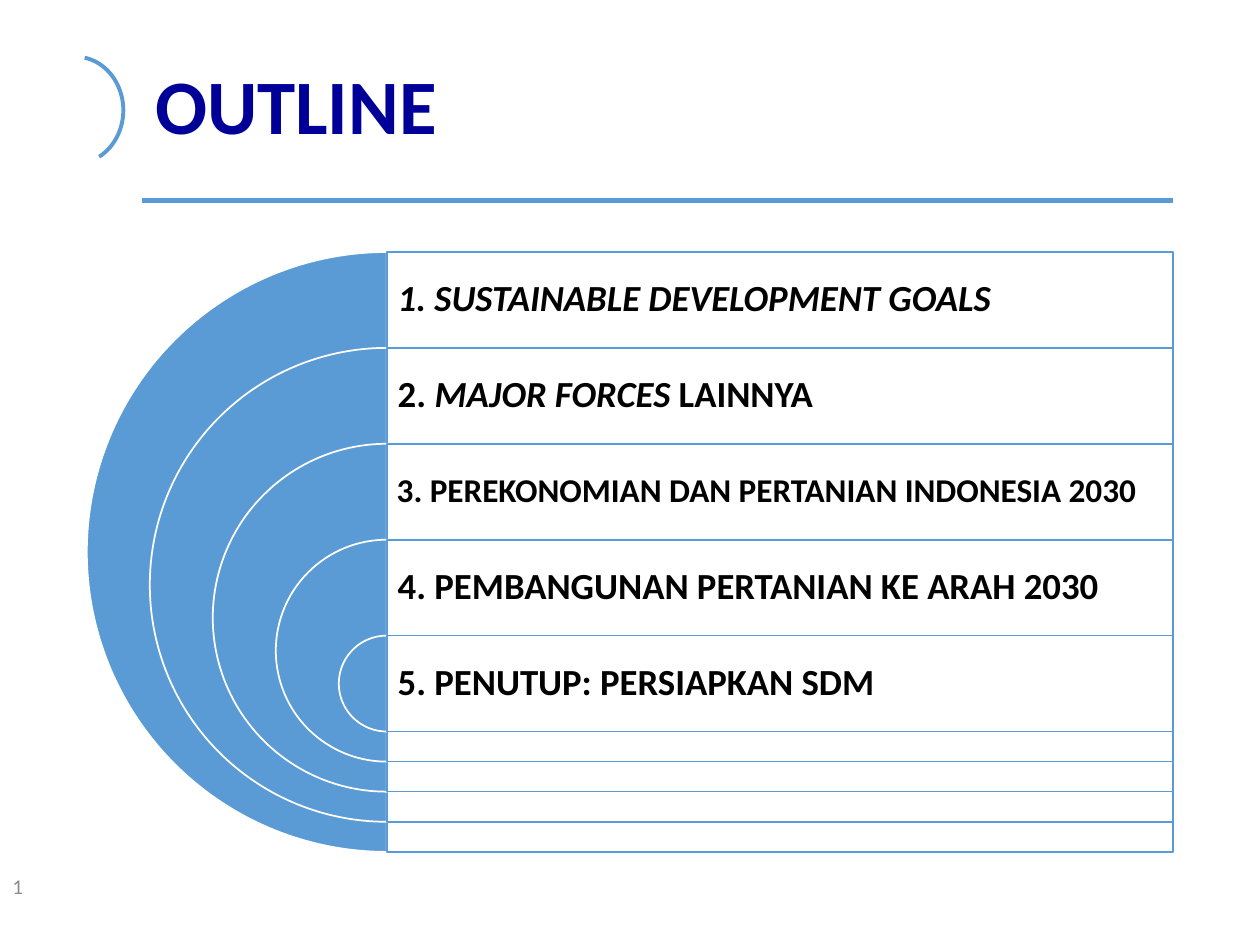
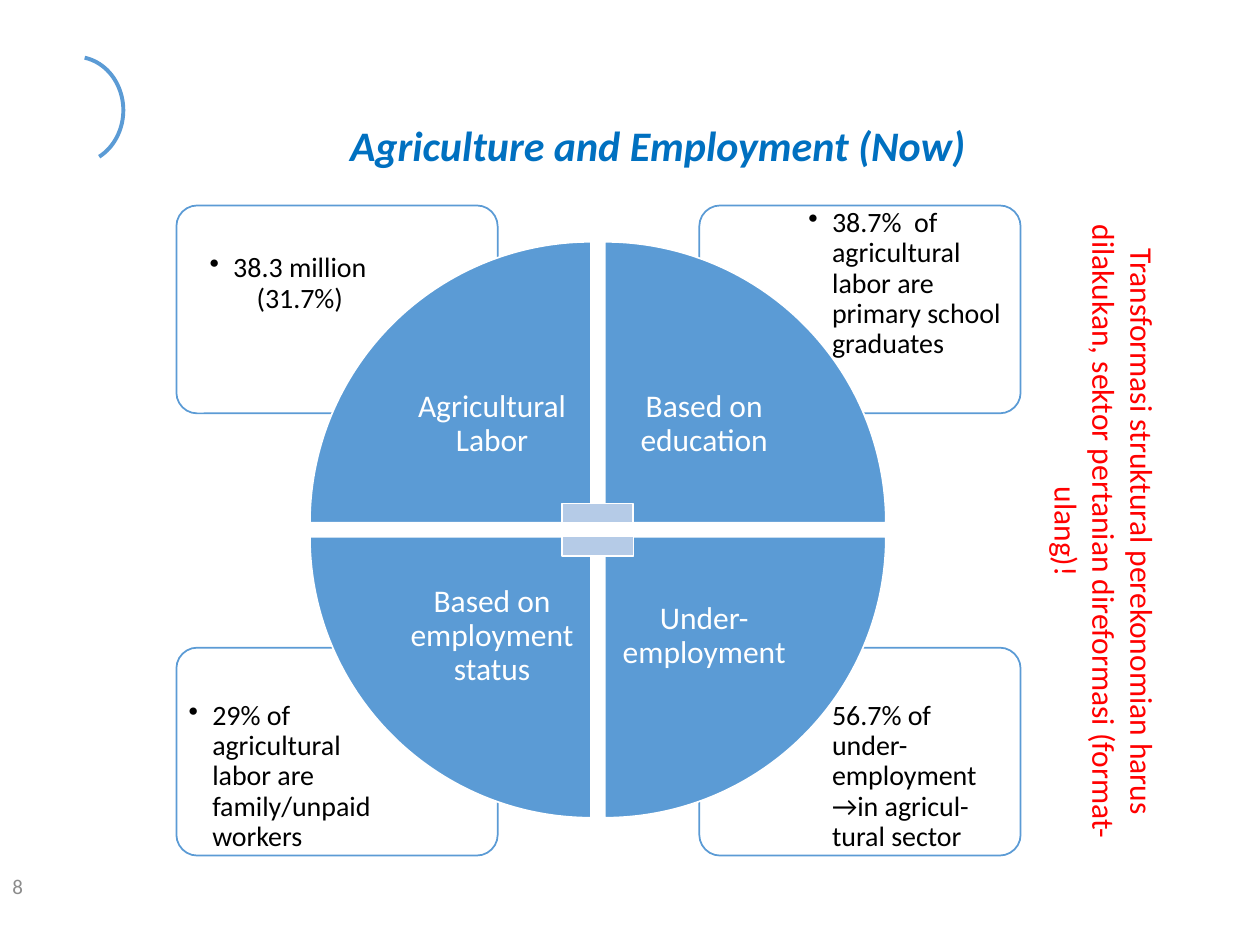
from lxml.etree import SubElement
from pptx import Presentation
from pptx.dml.color import RGBColor
from pptx.enum.shapes import MSO_CONNECTOR, MSO_SHAPE
from pptx.enum.text import MSO_ANCHOR, MSO_AUTO_SIZE, PP_ALIGN
from pptx.oxml.ns import qn
from pptx.util import Pt

FONT = "Calibri"
HUES = {
    "blue": "5B9BD5", "pale": "B5CBE7", "navy": "000099", "azure": "0070C0",
    "white": "FFFFFF", "black": "000000", "red": "FF0000", "gray": "8C8C8C",
}
INK = {name: RGBColor.from_string(code) for name, code in HUES.items()}


def draw(slide, kind, box, fill, line, width=1, alpha=None):
    """Add a preset shape; fill None leaves it open, alpha is opacity in percent."""
    shape = slide.shapes.add_shape(kind, *map(Pt, box))
    shape.shadow.inherit = False
    shape.line.color.rgb = INK[line]
    shape.line.width = Pt(width)
    if fill is None:
        shape.fill.background()
    else:
        shape.fill.solid()
        shape.fill.fore_color.rgb = INK[fill]
    if alpha:
        color = shape.element.spPr.find(qn("a:solidFill"))[0]
        SubElement(color, qn("a:alpha")).set("val", str(alpha * 1000))
    return shape


def write(shape, runs, size, color, align=PP_ALIGN.LEFT, pad=None, space=0.9,
          bold=False):
    """Fill a shape with one paragraph of (text, italic) runs."""
    frame = shape.text_frame
    frame.word_wrap = True
    frame.auto_size = MSO_AUTO_SIZE.NONE
    frame.vertical_anchor = MSO_ANCHOR.MIDDLE
    if pad is not None:
        frame.margin_left = frame.margin_right = Pt(pad)
        frame.margin_top = frame.margin_bottom = Pt(pad)
    para = frame.paragraphs[0]
    para.alignment = align
    para.line_spacing = space
    for text, italic in runs:
        run = para.add_run()
        run.text = text
        run.font.name = FONT
        run.font.size = Pt(size)
        run.font.bold = bold
        run.font.italic = italic
        run.font.color.rgb = INK[color]
    return para


deck = Presentation()
deck.slide_width, deck.slide_height = Pt(720), Pt(540)

# Shared title, arc and page number
heads = [
    ("OUTLINE", False, 44, "navy", PP_ALIGN.LEFT, (81.4, 28.8, 589, 67.7), "1"),
    ("Agriculture and Employment (Now)", True, 24, "azure", PP_ALIGN.CENTER,
     (74.9, 51.8, 601.9, 65.5), "8"),
]
for text, italic, size, color, align, box, number in heads:
    slide = deck.slides.add_slide(deck.slide_layouts[5])
    title = slide.shapes.title
    title.left, title.top, title.width, title.height = map(Pt, box)
    write(title, [(text, italic)], size, color, align, bold=True)
    arc = draw(slide, MSO_SHAPE.ARC, (15.8, 32.4, 54.7, 61.2), None, "blue", 2.25)
    arc.adjustments[0], arc.adjustments[1] = 167.99, 37.74
    page = slide.shapes.add_textbox(Pt(0), Pt(492), Pt(162), Pt(28.8))
    write(page, [(number, False)], 12, "gray", space=1)

outline, labor = deck.slides

# Outline: nested half discs with rows
rule = outline.shapes.add_connector(
    MSO_CONNECTOR.STRAIGHT, Pt(81.4), Pt(114.5), Pt(670.5), Pt(114.5))
rule.line.color.rgb = INK["blue"]
rule.line.width = Pt(3)
SubElement(rule.element.spPr, qn("a:effectLst"))

topics = [
    (21, [("1. SUSTAINABLE DEVELOPMENT GOALS", True)]),
    (21, [("2. ", False), ("MAJOR FORCES", True), (" LAINNYA", False)]),
    (19, [("3. PEREKONOMIAN DAN PERTANIAN INDONESIA 2030", False)]),
    (21, [("4. PEMBANGUNAN PERTANIAN KE ARAH 2030", False)]),
    (21, [("5. PENUTUP: PERSIAPKAN SDM", False)]),
]
mid, wide, row = 221, 449.5, 54.8
for i, (size, runs) in enumerate(topics):
    top = 144 + i * row
    tall = row + 72 * (len(topics) - 1 - i)
    disc = draw(outline, MSO_SHAPE.PIE, (mid - tall / 2, top, tall, tall),
                "blue", "white")
    disc.adjustments[0], disc.adjustments[1] = 54, 162
    draw(outline, MSO_SHAPE.RECTANGLE, (mid, top, wide, tall), "white", "blue",
         alpha=90)
    label = outline.shapes.add_textbox(Pt(mid), Pt(top), Pt(wide), Pt(row))
    write(label, runs, size, "black", pad=size * 0.3, bold=True)

# Employment: four cards behind four wedges, as (column, row, turn, name, fact)
parts = [
    (1, 1, 180, "Under-employment",
     "56.7% of under-employment →in agricul-tural sector"),
    (0, 1, 270, "Based on employment status",
     "29% of agricultural labor are family/unpaid workers"),
    (1, 0, 90, "Based on education",
     "38.7%  of agricultural labor are primary school graduates"),
    (0, 0, 0, "Agricultural Labor", "38.3 million (31.7%)"),
]
for col, line, turn, name, fact in parts:
    card = draw(labor, MSO_SHAPE.ROUNDED_RECTANGLE,
                (100.8 + 298.8 * col, 117.4 + 252.7 * line, 183.6, 118.8),
                "white", "blue", alpha=90)
    card.adjustments[0] = 0.1
    note = labor.shapes.add_textbox(Pt(103 + 354.2 * col), Pt(120.2 + 281.6 * line),
                                    Pt(123.1), Pt(84.2))
    align = PP_ALIGN.LEFT if col or line else PP_ALIGN.CENTER
    para = write(note, [(fact, False)], 16, "black", align, pad=4.8)
    props = para._p.get_or_add_pPr()
    props.set("marL", str(Pt(13.5)))
    props.set("indent", str(-Pt(13.5)))
    SubElement(props, qn("a:buChar")).set("char", "•")

for col, line, turn, name, fact in parts:
    wedge = draw(labor, MSO_SHAPE.PIE_WEDGE,
                 (177.1 + 168.5 * col, 138.2 + 168.5 * line, 160.6, 160.6),
                 "blue", "white")
    wedge.rotation = turn
    label = labor.shapes.add_textbox(Pt(224.4 + 121.2 * col), Pt(185.6 + 121.1 * line),
                                     Pt(113.6), Pt(113.6))
    write(label, [(name, False)], 18, "white", PP_ALIGN.CENTER, pad=10)

for top, turn in [(269.3, 0), (288, 180)]:
    bar = draw(labor, MSO_SHAPE.MATH_MINUS, (313.9, top, 55.4, 48.2), "pale", "white")
    bar.rotation = turn

side = labor.shapes.add_textbox(Pt(587.5), Pt(118.1), Pt(79.9), Pt(371.5))
write(side, [("Transformasi struktural perekonomian harus dilakukan, sektor "
              "pertanian direformasi (format-ulang)!", False)],
      18, "red", PP_ALIGN.CENTER, space=1)
side.text_frame.vertical_anchor = MSO_ANCHOR.TOP
side.element.txBody.bodyPr.set("vert", "vert")

deck.save("out.pptx")
